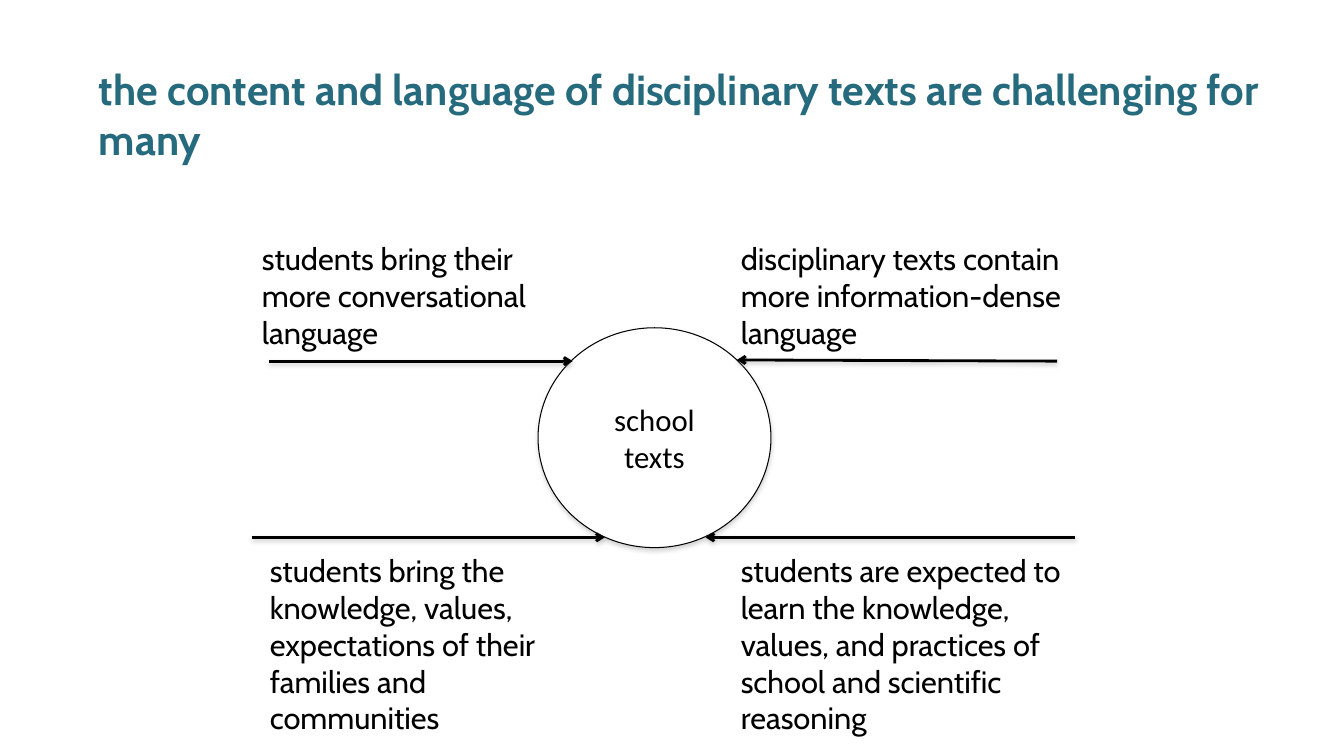
from lxml import etree
from pptx import Presentation
from pptx.dml.color import RGBColor
from pptx.enum.shapes import MSO_CONNECTOR, MSO_SHAPE
from pptx.enum.text import MSO_ANCHOR, MSO_AUTO_SIZE, PP_ALIGN
from pptx.oxml.ns import qn
from pptx.util import Cm, Pt

STRAIGHT = MSO_CONNECTOR.STRAIGHT
OVAL = MSO_SHAPE.OVAL
MIDDLE, TOP = MSO_ANCHOR.MIDDLE, MSO_ANCHOR.TOP
LEFT, CENTER = PP_ALIGN.LEFT, PP_ALIGN.CENTER
NO_FIT, GROW = MSO_AUTO_SIZE.NONE, MSO_AUTO_SIZE.SHAPE_TO_FIT_TEXT

# Content (positions and lengths in cm)
HEADLINE = "the content and language of disciplinary texts are challenging for many"
HUB = "school texts"
UPPER_TOP, UPPER_HEIGHT = 5.92, 3.07
LOWER_TOP, LOWER_HEIGHT = 13.77, 4.01
STATEMENTS = [  # left, top, width, height, paragraphs
    (6.35, UPPER_TOP, 7.87, UPPER_HEIGHT,
     ["students bring their more conversational", "language"]),
    (18.42, UPPER_TOP, 9.02, UPPER_HEIGHT,
     ["disciplinary texts contain more information-dense", "language"]),
    (6.55, LOWER_TOP, 8.46, LOWER_HEIGHT,
     ["students bring the knowledge, values, expectations of their families "
      "and communities"]),
    (18.42, LOWER_TOP, 9.14, LOWER_HEIGHT,
     ["students are expected to learn the knowledge, values, and practices "
      "of school and scientific reasoning"]),
]
ARROWS = [  # start x, start y, end x, end y
    (6.78, 9.1, 14.43, 9.1),
    (26.64, 9.1, 18.57, 9.07),
    (6.35, 13.54, 15.24, 13.54),
    (27.1, 13.54, 17.78, 13.54),
]
TEAL, BLACK, WHITE, GREY = "266A7D", "000000", "FFFFFF", "808080"


def color(hex_text):
    return RGBColor.from_string(hex_text)


def write(frame, paragraphs, font_name, size, hex_text, align, bold=False):
    frame.text = "\n".join(paragraphs)
    frame.word_wrap = True
    for paragraph in frame.paragraphs:
        paragraph.alignment = align
        for run in paragraph.runs:
            run.font.name = font_name
            run.font.size = Pt(size)
            run.font.bold = bold
            run.font.color.rgb = color(hex_text)


def add_shadow(part, distance, opacity):
    properties = part._element.spPr
    effects = etree.SubElement(properties, qn("a:effectLst"))
    shadow = etree.SubElement(
        effects, qn("a:outerShdw"), blurRad=str(Pt(3.1)),
        dist=str(Pt(distance)), dir="5400000", rotWithShape="0")
    tint = etree.SubElement(shadow, qn("a:srgbClr"), val=GREY)
    etree.SubElement(tint, qn("a:alpha"), val=str(opacity * 1000))


def main():
    prs = Presentation()
    prs.slide_width, prs.slide_height = Cm(33.87), Cm(19.05)
    slide = prs.slides.add_slide(prs.slide_layouts[5])
    shapes = slide.shapes

    # Headline
    headline = shapes.title
    headline.left, headline.top = Cm(2.34), Cm(1.02)
    headline.width, headline.height = Cm(30.81), Cm(3.68)
    frame = headline.text_frame
    write(frame, [HEADLINE], "Cabin", 30, TEAL, LEFT, bold=True)
    frame.auto_size = NO_FIT
    frame.vertical_anchor = MIDDLE
    frame.margin_left = frame.margin_right = Cm(0.15)
    frame.margin_top = frame.margin_bottom = Cm(0.15)

    # Central circle
    hub = shapes.add_shape(OVAL, Cm(13.56), Cm(8.26), Cm(5.87), Cm(5.54))
    hub.fill.solid()
    hub.fill.fore_color.rgb = color(WHITE)
    hub.line.color.rgb = color(BLACK)
    hub.line.width = Pt(0.75)
    add_shadow(hub, 1.8, 35)
    write(hub.text_frame, [HUB], "Calibri", 22, BLACK, CENTER)
    hub.text_frame.vertical_anchor = MIDDLE

    # Arrows pointing at the circle
    for ends in ARROWS:
        arrow = shapes.add_connector(STRAIGHT, *map(Cm, ends))
        arrow.line.color.rgb = color(BLACK)
        arrow.line.width = Pt(2)
        etree.SubElement(arrow.line._get_or_add_ln(), qn("a:tailEnd"), type="arrow")
        add_shadow(arrow, 1.6, 38)

    # Statements around the circle
    for *box, paragraphs in STATEMENTS:
        statement = shapes.add_textbox(*map(Cm, box))
        write(statement.text_frame, paragraphs, "Cabin", 22, BLACK, LEFT)
        statement.text_frame.vertical_anchor = TOP
        statement.text_frame.auto_size = GROW

    prs.save("out.pptx")


if __name__ == "__main__":
    main()
